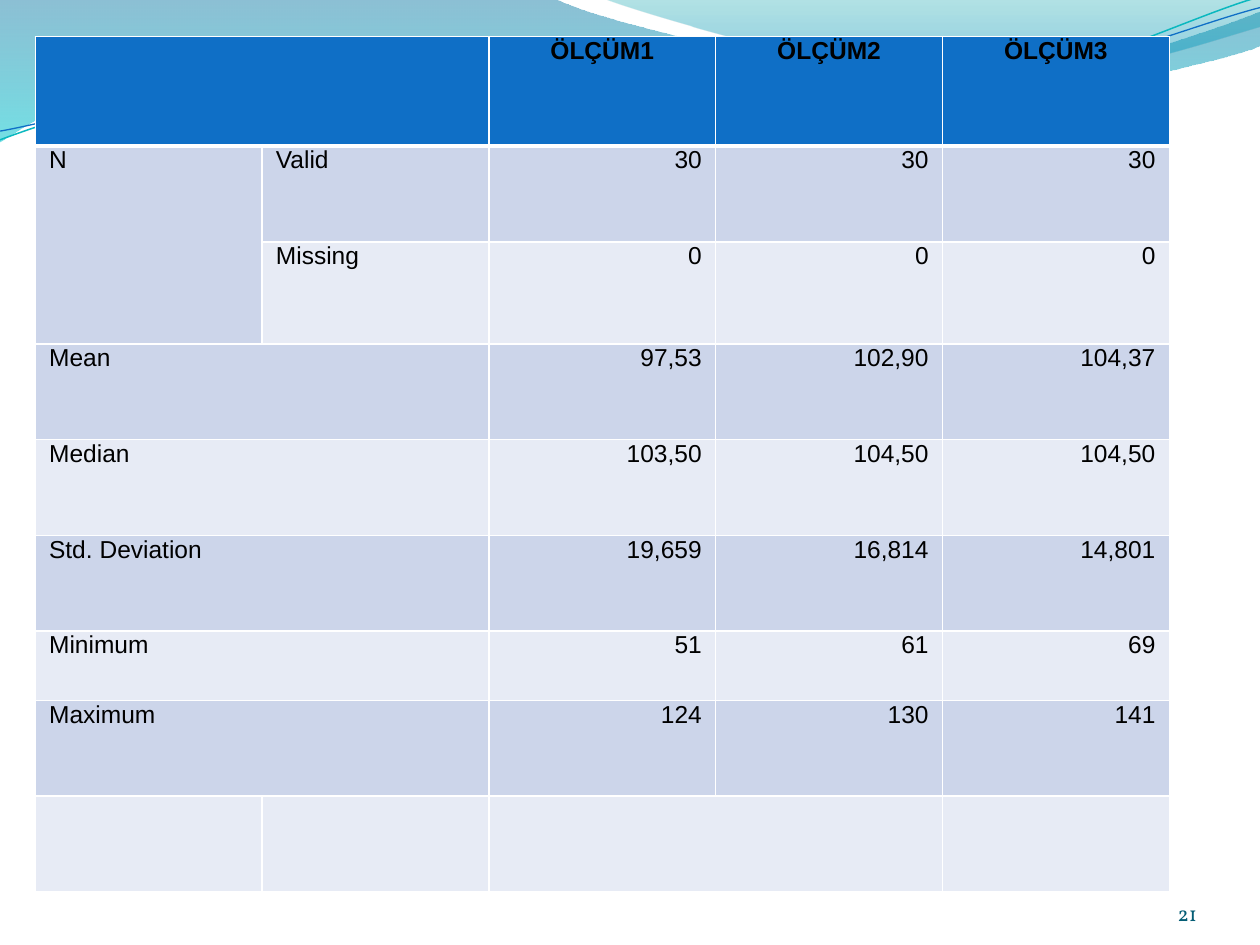
import math
from lxml import etree
from pptx import Presentation
from pptx import util as u
from pptx.dml.color import RGBColor
from pptx.enum import text
from pptx.oxml.ns import qn

WHITE, HEADER, BANDS = "FFFFFF", "0F6FC6", ("E7EBF5", "CCD5EA")
ALIGN = text.PP_ALIGN
COL_WIDTH = 1.8
ROW_HEIGHTS = [0.87, 0.76, 0.81, 0.76, 0.76, 0.76, 0.55, 0.76, 0.76]
ROWS = [
    ["", "", "ÖLÇÜM1", "ÖLÇÜM2", "ÖLÇÜM3"],
    ["N", "Valid", "30", "30", "30"],
    ["", "Missing", "0", "0", "0"],
    ["Mean", "", "97,53", "102,90", "104,37"],
    ["Median", "", "103,50", "104,50", "104,50"],
    ["Std. Deviation", "", "19,659", "16,814", "14,801"],
    ["Minimum", "", "51", "61", "69"],
    ["Maximum", "", "124", "130", "141"],
    ["", "", "", "", ""],
]
MERGES = [((1, 0), (2, 0)), ((8, 2), (8, 3))] + [((r, 0), (r, 1)) for r in (0, 3, 4, 5, 6, 7)]

# Each wave is a start point, then segments: one point for a line, three for a Bézier curve.
LEFT_WAVE = [[(0, 0)], [(4.4, -0.01)], [(4.76, 0.17), (6.64, 0.63), (7.58, 0.63)],
             [(8.53, 0.63), (9.58, 0.26), (10, 0.09)], [(10.01, 0.36)],
             [(9.83, 0.44), (8.7, 0.76), (7.46, 0.75)],
             [(6.22, 0.75), (3.82, 0.28), (2.57, 0.34)],
             [(1.29, 0.36), (0.46, 0.83), (-0.01, 1.13)], [(0, 0)]]
RIGHT_WAVE = [[(4.79, -0.01)], [(5.09, 0.11), (6.82, 0.62), (7.69, 0.65)],
              [(8.56, 0.69), (9.61, 0.32), (10, 0.21)], [(10, 0)], [(4.79, -0.01)]]
TEAL_LINE = [[(0, 1.11)], [(0.48, 0.93), (1.58, 0.57), (2.77, 0.52)],
             [(3.95, 0.47), (5.93, 0.89), (7.13, 0.8)],
             [(8.33, 0.71), (9.38, 0.15), (9.98, -0.02)]]
BLUE_LINE = [[(0, 1.04)], [(0.47, 0.96), (1.64, 0.61), (2.83, 0.56)],
             [(4.03, 0.51), (5.97, 0.84), (7.17, 0.75)],
             [(8.36, 0.67), (9.41, 0.21), (10, 0.06)]]
LINE_TILT = -2.7


def rgb(value):
    return RGBColor.from_string(value)


def apply(obj, **formats):
    for name, value in formats.items():
        setattr(obj, name, value)


def rotate(wave, center, degrees):
    cx, cy = center
    cos, sin = math.cos(math.radians(degrees)), math.sin(math.radians(degrees))
    return [[(cx + (x - cx) * cos - (y - cy) * sin,
              cy + (x - cx) * sin + (y - cy) * cos) for x, y in seg] for seg in wave]


def add_outline(s, wave, close):
    """Build the outline from all its points, then join each three into one curve."""
    start, *rest = [(u.Inches(x), u.Inches(y)) for seg in wave for x, y in seg]
    builder = s.shapes.build_freeform(*start)
    builder.add_line_segments(rest, close=close)
    sp = builder.convert_to_shape()
    sp.shadow.inherit = False
    lines = iter(list(sp._element.spPr.iter(qn("a:lnTo"))))
    for seg in wave[1:]:
        group = [next(lines) for _ in seg]
        if len(group) == 3:
            curve = etree.Element(qn("a:cubicBezTo"))
            group[0].addprevious(curve)
            for line in group:
                curve.append(line[0])
                line.getparent().remove(line)
    return sp


def add_wave(s, wave, stops):
    """Fill a wave top to bottom; stops are (position, colour, opacity in percent)."""
    sp = add_outline(s, wave, True)
    sp.line.fill.background()
    sp.fill.gradient()
    sp.fill.gradient_angle = 270
    for stop, (position, color, _) in zip(sp.fill.gradient_stops, stops):
        stop.position = position
        stop.color.rgb = rgb(color)
    for clr, (_, _, opacity) in zip(sp._element.spPr.iter(qn("a:srgbClr")), stops):
        etree.SubElement(clr, qn("a:alpha"), val=str(opacity * 1000))


def add_wave_line(s, wave, center, color, width):
    sp = add_outline(s, rotate(wave, center, -LINE_TILT), False)
    sp.rotation = LINE_TILT
    sp.fill.background()
    sp.line.color.rgb = rgb(color)
    sp.line.width = u.Pt(width)


def add_header_waves(s):
    add_wave(s, LEFT_WAVE, [(0, "0074A1", 45), (1, "00C6CF", 55)])
    add_wave(s, RIGHT_WAVE, [(0, "00A1A9", 30), (0.8, "008BBF", 45)])
    add_wave_line(s, TEAL_LINE, (4.99, 0.58), "0AB8BF", 0.85)
    add_wave_line(s, BLUE_LINE, (4.99, 0.59), HEADER, 0.75)


def set_borders(cell, **widths):
    tcPr = cell._tc.get_or_add_tcPr()
    for side in "LRTB":
        ln = etree.SubElement(tcPr, qn(f"a:ln{side}"), w=str(u.Pt(widths.get(side, 1))))
        fill = etree.SubElement(ln, qn("a:solidFill"))
        etree.SubElement(fill, qn("a:srgbClr"), val=WHITE)


def write(p, value, align, size, font, color, bold=False):
    p.alignment = align
    r = p.add_run()
    r.text = value
    apply(r.font, size=u.Pt(size), name=font, bold=bold)
    r.font.color.rgb = rgb(color)


def fill_cell(cell, row, col, value):
    set_borders(cell, **{0: {"B": 3}, 1: {"T": 3}}.get(row, {}))
    cell.fill.solid()
    cell.fill.fore_color.rgb = rgb(HEADER if row == 0 else BANDS[row % 2])
    if value:
        apply(cell, margin_left=u.Inches(0.07), margin_right=u.Inches(0.07),
              margin_top=0, margin_bottom=0)
        p = cell.text_frame.paragraphs[0]
        align = ALIGN.CENTER if row == 0 else ALIGN.LEFT if col < 2 else ALIGN.RIGHT
        write(p, value, align, 14, "Arial", "000000", row == 0)
        p.line_spacing = u.Pt(16)
        for side in ("marL", "marR"):
            p._p.get_or_add_pPr().set(side, str(u.Inches(0.04)))


def add_statistics(s, left, top):
    cols = len(ROWS[0])
    table = s.shapes.add_table(len(ROWS), cols, u.Inches(left), u.Inches(top),
                               u.Inches(COL_WIDTH * cols), u.Inches(sum(ROW_HEIGHTS))).table
    for column in table.columns:
        column.width = u.Inches(COL_WIDTH)
    for row, height in enumerate(ROW_HEIGHTS):
        table.rows[row].height = u.Inches(height)
        for col, value in enumerate(ROWS[row]):
            fill_cell(table.cell(row, col), row, col, value)
    for first, last in MERGES:
        table.cell(*first).merge(table.cell(*last))


def add_page_number(s, left, top, width, height):
    tf = s.shapes.add_textbox(*map(u.Inches, (left, top, width, height))).text_frame
    apply(tf, word_wrap=True, vertical_anchor=text.MSO_ANCHOR.BOTTOM,
          margin_left=0, margin_right=0, margin_top=0, margin_bottom=0)
    write(tf.paragraphs[0], "21", ALIGN.RIGHT, 12, "Vollkorn", "045D75")


def main():
    prs = Presentation()
    apply(prs, slide_width=u.Inches(10), slide_height=u.Inches(7.5))
    s = prs.slides.add_slide(prs.slide_layouts[6])
    add_header_waves(s)
    add_statistics(s, 0.28, 0.29)
    add_page_number(s, 8.67, 6.95, 0.83, 0.4)
    prs.save("out.pptx")


if __name__ == "__main__":
    main()
